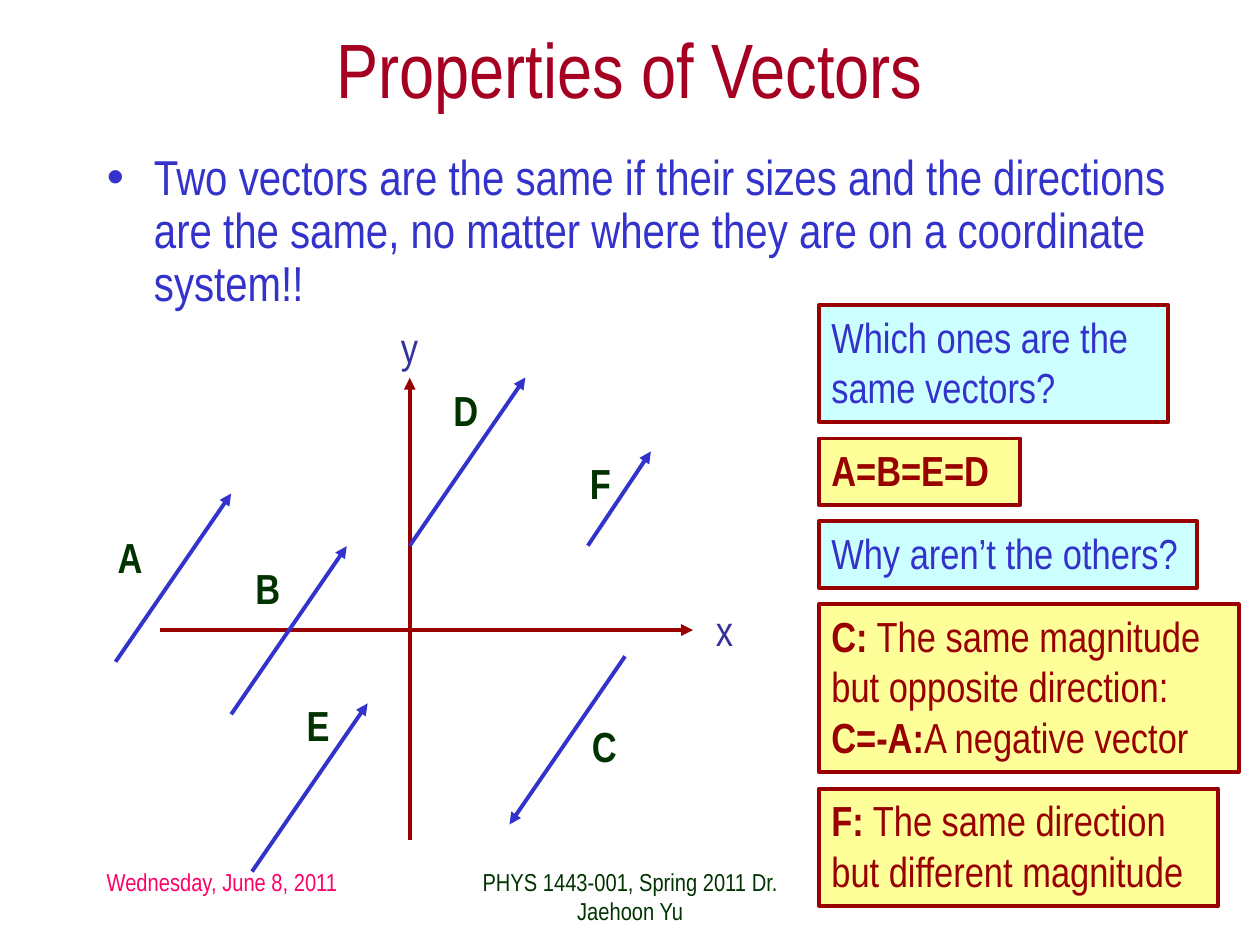
from lxml import etree
from pptx import Presentation
from pptx.dml.color import RGBColor
from pptx.enum import shapes, text
from pptx.oxml.ns import qn
from pptx.util import Cm, Pt

BLUE, RED, GREEN, CRIMSON, NAVY = "3333CC", "990000", "003300", "A50021", "333399"
CYAN, YELLOW = "CCFFFF", "FFFF99"


def write(tf, parts, size, color, align=text.PP_ALIGN.LEFT, **frame):
    """Fill the first paragraph with (words, bold) runs and format the frame."""
    frame = {"word_wrap": True, "auto_size": text.MSO_AUTO_SIZE.NONE,
             "vertical_anchor": text.MSO_ANCHOR.TOP, **frame}
    for name, value in frame.items():
        setattr(tf, name, value)
    p = tf.paragraphs[0]
    p.alignment = align
    for words, bold in parts:
        r = p.add_run()
        r.text = words
        for name, value in {"name": "Arial Narrow", "size": Pt(size), "bold": bold}.items():
            setattr(r.font, name, value)
        r.font.color.rgb = RGBColor.from_string(color)
    return p


def arrow(x, y, dx, dy, color):
    ends = [Cm(v) for v in (x, y, x + dx, y + dy)]
    sp = s.shapes.add_connector(shapes.MSO_CONNECTOR.STRAIGHT, *ends)
    sp.line.color.rgb = RGBColor.from_string(color)
    sp.line.width = Pt(2.25)
    etree.SubElement(sp.line._get_or_add_ln(), qn("a:tailEnd"), type="triangle")
    etree.SubElement(sp._element.spPr, qn("a:effectLst"))


prs = Presentation()
prs.slide_width, prs.slide_height = Cm(25.4), Cm(19.05)
s = prs.slides.add_slide(prs.slide_layouts[1])

# Title and statement
title, body = s.placeholders
for sp, box in ((title, (1.9, 0.42, 21.6, 1.9)), (body, (1.9, 2.96, 22, 2.75))):
    sp.left, sp.top, sp.width, sp.height = [Cm(v) for v in box]
write(title.text_frame, [("Properties of Vectors", False)], 44, CRIMSON,
      text.PP_ALIGN.CENTER, vertical_anchor=text.MSO_ANCHOR.MIDDLE)
p = write(body.text_frame, [("Two vectors are the same if their sizes and the directions are the same, "
                             "no matter where they are on a coordinate system!!", False)], 28, BLUE)
p.line_spacing = 0.9
p.space_before = Pt(0)
pPr = p._p.get_or_add_pPr()
pPr.set("marL", str(Cm(0.95)))
pPr.set("indent", str(Cm(-0.95)))

# Footer
for words, left, width, color, align in (
        ("Wednesday, June 8, 2011", 1.9, 5.3, "FF0066", text.PP_ALIGN.LEFT),
        ("PHYS 1443-001, Spring 2011 Dr. Jaehoon Yu", 8.68, 8.05, GREEN, text.PP_ALIGN.CENTER)):
    sp = s.shapes.add_textbox(Cm(left), Cm(17.35), Cm(width), Cm(1.27))
    write(sp.text_frame, [(words, False)], 14, color, align)

# Axes and vectors: A, B, D and E are equal, C is their opposite, F is shorter
origin_x, origin_y = 8.26, 12.7
arrow(3.23, origin_y, 10.74, 0, RED)
arrow(origin_x, 16.93, 0, -9.31, RED)
same, opposite, shorter = (2.33, -3.39), (-2.33, 3.39), (1.27, -1.9)
for start, step in (((2.33, 13.34), same), ((4.66, 14.4), same), ((5.08, 17.57), same),
                    ((origin_x, 11), same), ((12.6, 13.23), opposite), ((11.85, 11), shorter)):
    arrow(*start, *step, BLUE)

for name, left, top in (("x", 14.18, 12.07), ("y", 7.83, 6.35), ("A", 2.12, 10.58),
                        ("B", 4.9, 11.22), ("E", 5.93, 13.97), ("D", 8.89, 7.62),
                        ("C", 11.68, 14.4), ("F", 11.64, 9.1)):
    is_vector = name.isupper()
    sp = s.shapes.add_textbox(Cm(left), Cm(top), Cm(1 if is_vector else 0.86), Cm(1.27))
    write(sp.text_frame, [(name, is_vector)], 24, GREEN if is_vector else NAVY, word_wrap=False)

# Questions and answers, stacked with equal gaps
top, gap = 6.15, 0.33
for parts, width, height, fill, color in (
        ([("Which ones are the same vectors?", False)], 7.04, 2.36, CYAN, BLUE),
        ([("A=B=E=D", True)], 4.06, 1.34, YELLOW, RED),
        ([("Why aren’t the others?", False)], 7.62, 1.34, CYAN, BLUE),
        ([("C:", True), (" The same magnitude but opposite direction: ", False),
          ("C=-A:", True), ("A negative vector", False)], 8.46, 3.39, YELLOW, RED),
        ([("F:", True), (" The same direction but different magnitude", False)],
         8.05, 2.36, YELLOW, RED)):
    sp = s.shapes.add_shape(shapes.MSO_SHAPE.RECTANGLE, Cm(16.51), Cm(top), Cm(width), Cm(height))
    sp.shadow.inherit = False
    sp.fill.solid()
    sp.fill.fore_color.rgb = RGBColor.from_string(fill)
    sp.line.color.rgb = RGBColor.from_string(RED)
    sp.line.width = Pt(2.25)
    write(sp.text_frame, parts, 24, color)
    top += height + gap

prs.save("out.pptx")
